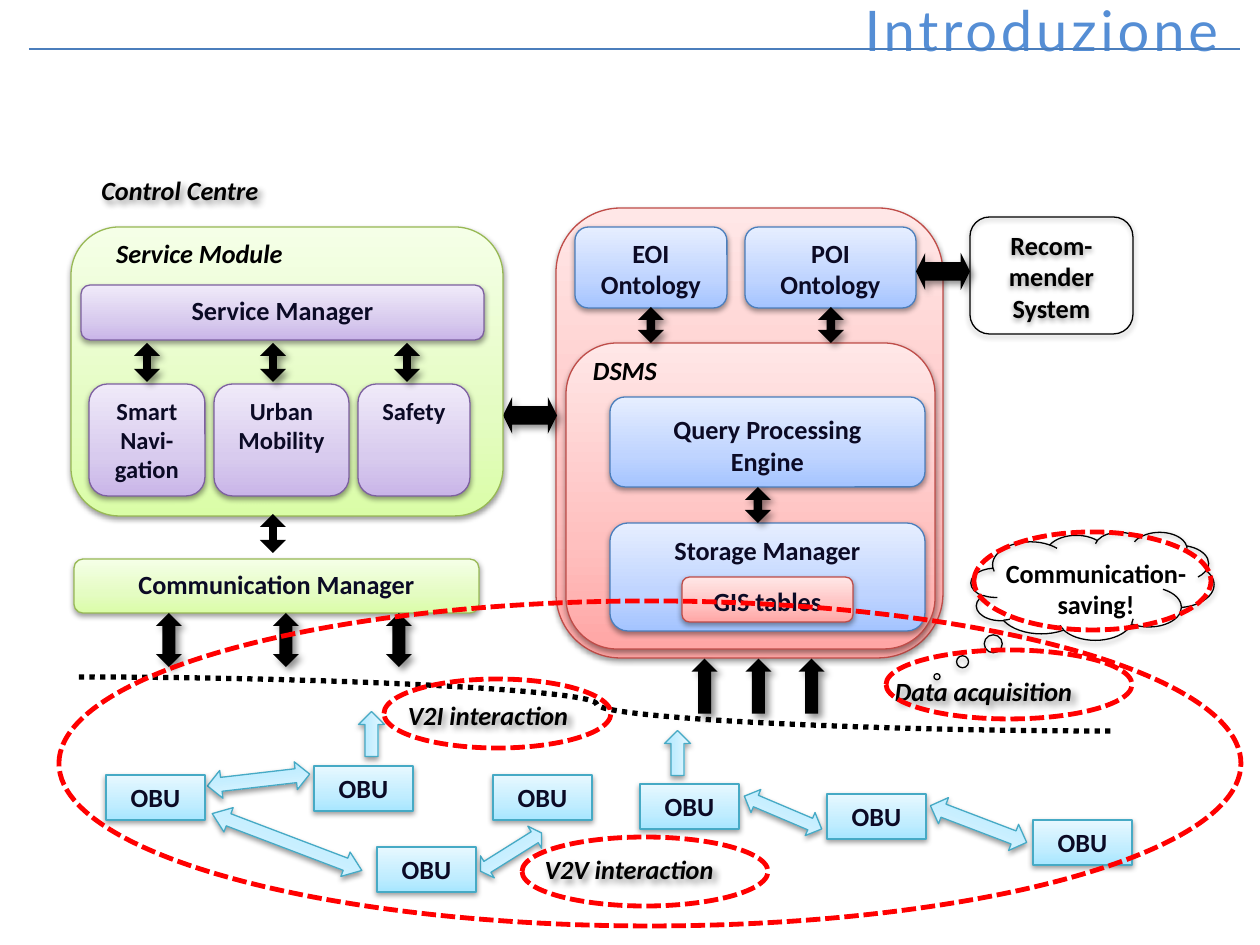
from dataclasses import dataclass

from lxml.etree import SubElement
from pptx import Presentation
from pptx.dml.color import RGBColor
from pptx.enum.dml import MSO_LINE as Dash
from pptx.enum.shapes import MSO_CONNECTOR as Conn, MSO_SHAPE as Shape
from pptx.enum.text import MSO_ANCHOR as Anchor, MSO_AUTO_SIZE as Fit, PP_ALIGN as Align
from pptx.oxml.ns import qn
from pptx.util import Pt

PX = 914400 / 126


@dataclass(frozen=True)
class Theme:
    font: str = "Calibri"
    title_font: str = "Lato"
    title_size: int = 32
    body: int = 15
    small: int = 14
    title: str = "558ED5"
    ink: str = "0B0A25"
    black: str = "000000"
    highlight: str = "FF0000"
    rule: str = "4B7EBC"
    # Each palette: outline, then gradient stops at 0, 35 and 100 %
    red: tuple = ("BF4C48", "FFA6A5", "FFC0BF", "FFE7E7")
    cyan: tuple = ("46AAC5", "A7E6FF", "C1EDFF", "E7F8FF")
    green: tuple = ("98B955", "DAFDA7", "E4FCC2", "F5FFE7")
    blue: tuple = ("4B7EBC", "A4C4FF", "BFD4FF", "E6EEFF")
    purple: tuple = ("7D60A0", "C9B5E8", "D8CBEE", "F0EAF9")
    # Each shadow: opacity %, blur pt, distance pt, direction in degrees
    soft: tuple = (38, 3.15, 1.57, 90)
    strong: tuple = (43, 4, 3, 45)


T = Theme()


def emu(*lengths):
    return [round(n * PX) for n in lengths]


def rgb(color):
    return RGBColor.from_string(color)


def set_shadow(sp, shadow):
    sp.shadow.inherit = False
    if not shadow:
        return
    opacity, blur, dist, angle = shadow
    effects = sp._element.spPr.find(qn("a:effectLst"))
    outer = SubElement(effects, qn("a:outerShdw"), blurRad=str(Pt(blur)), dist=str(Pt(dist)),
                       dir=str(angle * 60000), algn="ctr", rotWithShape="0")
    color = SubElement(outer, qn("a:srgbClr"), val=T.black)
    SubElement(color, qn("a:alpha"), val=str(opacity * 1000))


def set_gradient(sp, colors):
    sp.fill.gradient()
    sp.fill.gradient_angle = 90
    stops = sp._element.spPr.find(qn("a:gradFill")).find(qn("a:gsLst"))
    for stop in list(stops):
        stops.remove(stop)
    for pos, color in zip((0, 35, 100), colors):
        gs = SubElement(stops, qn("a:gs"), pos=str(pos * 1000))
        SubElement(gs, qn("a:srgbClr"), val=color)


def set_line(line, color, width=0.75, dash=None):
    line.color.rgb = rgb(color)
    line.width = Pt(width)
    if dash:
        line.dash_style = dash


def write(sp, text, *, size=T.body, font=T.font, color=T.ink, bold=True, italic=False,
          align=Align.CENTER, anchor=Anchor.TOP, spacing=None):
    tf = sp.text_frame
    tf.word_wrap = True
    tf.vertical_anchor = anchor
    for i, line in enumerate(text.split("\n")):
        p = tf.add_paragraph() if i else tf.paragraphs[0]
        p.alignment = align
        r = p.add_run()
        r.text = line
        f = r.font
        f.name, f.size, f.bold, f.italic = font, Pt(size), bold, italic
        f.color.rgb = rgb(color)
        if spacing:
            r._r.get_or_add_rPr().set("spc", str(spacing))


def add_preset(slide, kind, box, adj=(), rot=0):
    sp = slide.shapes.add_shape(kind, *emu(*box))
    for i, value in enumerate(adj):
        sp.adjustments[i] = value
    sp.rotation = rot
    return sp


def add_block(slide, box, palette, text="", kind=Shape.ROUNDED_RECTANGLE, adj=(), rot=0, **fmt):
    sp = add_preset(slide, kind, box, adj, rot)
    set_gradient(sp, palette[1:])
    set_line(sp.line, palette[0])
    set_shadow(sp, T.soft)
    if text:
        write(sp, text, **fmt)


def add_outline(slide, kind, box, text="", adj=()):
    sp = add_preset(slide, kind, box, adj)
    sp.fill.background()
    set_line(sp.line, T.black)
    set_shadow(sp, T.soft)
    if text:
        write(sp, text, color=T.black)


def add_black_arrow(slide, kind, box, head, rot=0, shadow=T.strong):
    sp = add_preset(slide, kind, box, (0.5, head), rot)
    sp.fill.solid()
    sp.fill.fore_color.rgb = rgb(T.black)
    sp.line.fill.background()
    set_shadow(sp, shadow)


def add_highlight(slide, box):
    sp = add_preset(slide, Shape.OVAL, box)
    sp.fill.background()
    set_line(sp.line, T.highlight, 2.75, Dash.SQUARE_DOT)
    sp.line._ln.find(qn("a:prstDash")).set("val", "sysDash")
    set_shadow(sp, None)


def add_label(slide, box, text, shadow=None, italic=True, **fmt):
    sp = slide.shapes.add_textbox(*emu(*box))
    write(sp, text, color=T.black, italic=italic, **fmt)
    sp.text_frame.auto_size = Fit.SHAPE_TO_FIT_TEXT
    if shadow:
        set_shadow(sp, shadow)


def add_line(slide, kind, ends, color, width=0.75, dash=None):
    c = slide.shapes.add_connector(kind, *emu(*ends))
    set_line(c.line, color, width, dash)
    SubElement(c._element.spPr, qn("a:effectLst"))


def add_title(slide, text):
    sp = slide.shapes.add_textbox(*emu(20, 0, 1211, 59))
    write(sp, text, size=T.title_size, font=T.title_font, color=T.title, bold=False,
          align=Align.RIGHT, anchor=Anchor.MIDDLE, spacing=220)
    add_line(slide, Conn.STRAIGHT, (29, 49, 1240, 49), T.rule)


def add_service_module(slide):
    add_block(slide, (71, 227, 432, 289), T.green)
    add_label(slide, (49, 231, 301, 44), "Service Module")
    add_block(slide, (81, 285, 403, 55), T.purple, "Service Manager")
    for x, w, text in ((89, 116, "Smart Navi-\ngation"), (214, 135, "Urban Mobility"),
                       (358, 112, "Safety")):
        add_block(slide, (x, 384, w, 112), T.purple, text, size=T.small)
    for x in (134, 260, 394):
        add_black_arrow(slide, Shape.UP_DOWN_ARROW, (x, 343, 26, 39), 0.3)
    add_black_arrow(slide, Shape.UP_DOWN_ARROW, (260, 514, 26, 39), 0.3, shadow=None)
    add_block(slide, (74, 559, 405, 54), T.green, "Communication Manager")


def add_data_module(slide):
    add_block(slide, (556, 208, 387, 450), T.red)
    add_block(slide, (575, 227, 152, 81), T.blue, "EOI Ontology")
    add_block(slide, (745, 227, 171, 81), T.blue, "POI Ontology")
    add_block(slide, (566, 343, 369, 306), T.red)
    add_label(slide, (575, 348, 100, 44), "DSMS")
    add_block(slide, (610, 523, 315, 108), T.blue, "Storage Manager")
    add_block(slide, (682, 577, 171, 45), T.red, "GIS tables")
    add_block(slide, (610, 397, 315, 90), T.blue, "Query Processing\nEngine", anchor=Anchor.BOTTOM)
    for x, y in ((638, 307), (818, 307), (745, 487)):
        add_black_arrow(slide, Shape.UP_DOWN_ARROW, (x, y, 26, 36), 0.33)
    add_outline(slide, Shape.ROUNDED_RECTANGLE, (970, 217, 163, 117), "Recom-mender System")
    for x, y in ((503, 397), (916, 253)):
        add_black_arrow(slide, Shape.LEFT_RIGHT_ARROW, (x, y, 54, 37), 0.25)


def add_vehicles(slide):
    add_line(slide, Conn.CURVE, (79, 677, 1114, 731), T.black, 3, Dash.ROUND_DOT)
    for x in (156, 273, 386):
        add_black_arrow(slide, Shape.UP_DOWN_ARROW, (x, 613, 26, 54), 0.5)
    for x in (677, 731, 784):
        add_black_arrow(slide, Shape.LEFT_ARROW, (x, 673, 55, 26), 0.5, rot=90)
    for x, y in ((349, 721), (655, 740)):
        add_block(slide, (x, y, 45, 26), T.cyan, kind=Shape.LEFT_ARROW, rot=90)
    for box, head, rot in (((207, 766, 103, 28), 0.5, 173.4), ((207, 829, 160, 26), 0.67, 200.8),
                           ((475, 839, 72, 26), 0.31, 147.9), ((741, 800, 84, 25), 0.5, 203),
                           ((927, 810, 103, 28), 0.5, 200.9)):
        add_block(slide, box, T.cyan, kind=Shape.LEFT_RIGHT_ARROW, adj=(0.5, head), rot=rot)
    for x, y in ((106, 775), (314, 766), (377, 847), (493, 775), (640, 784), (827, 794), (1033, 820)):
        add_block(slide, (x, y, 99, 45), T.cyan, "OBU", kind=Shape.RECTANGLE)


def add_notes_and_highlights(slide):
    add_label(slide, (89, 168, 210, 44), "Control Centre", T.strong, align=Align.LEFT)
    add_label(slide, (384, 693, 208, 77), "V2I interaction", T.strong)
    add_label(slide, (520, 847, 218, 44), "V2V interaction", T.strong)
    add_label(slide, (835, 669, 297, 44), "Data acquisition", T.strong)
    add_outline(slide, Shape.CLOUD_CALLOUT, (971, 532, 243, 108), adj=(-0.64, 0.84))
    add_label(slide, (979, 551, 234, 77), "Communication-saving!", italic=False)
    for box in ((384, 679, 227, 69), (522, 837, 246, 69), (886, 650, 246, 69),
                (974, 532, 237, 98), (59, 601, 1182, 325)):
        add_highlight(slide, box)


def main():
    prs = Presentation()
    prs.slide_width, prs.slide_height = emu(1260, 945)
    slide = prs.slides.add_slide(prs.slide_layouts[6])
    add_data_module(slide)
    add_service_module(slide)
    add_vehicles(slide)
    add_title(slide, "Introduzione")
    add_notes_and_highlights(slide)
    prs.save("out.pptx")


if __name__ == "__main__":
    main()
